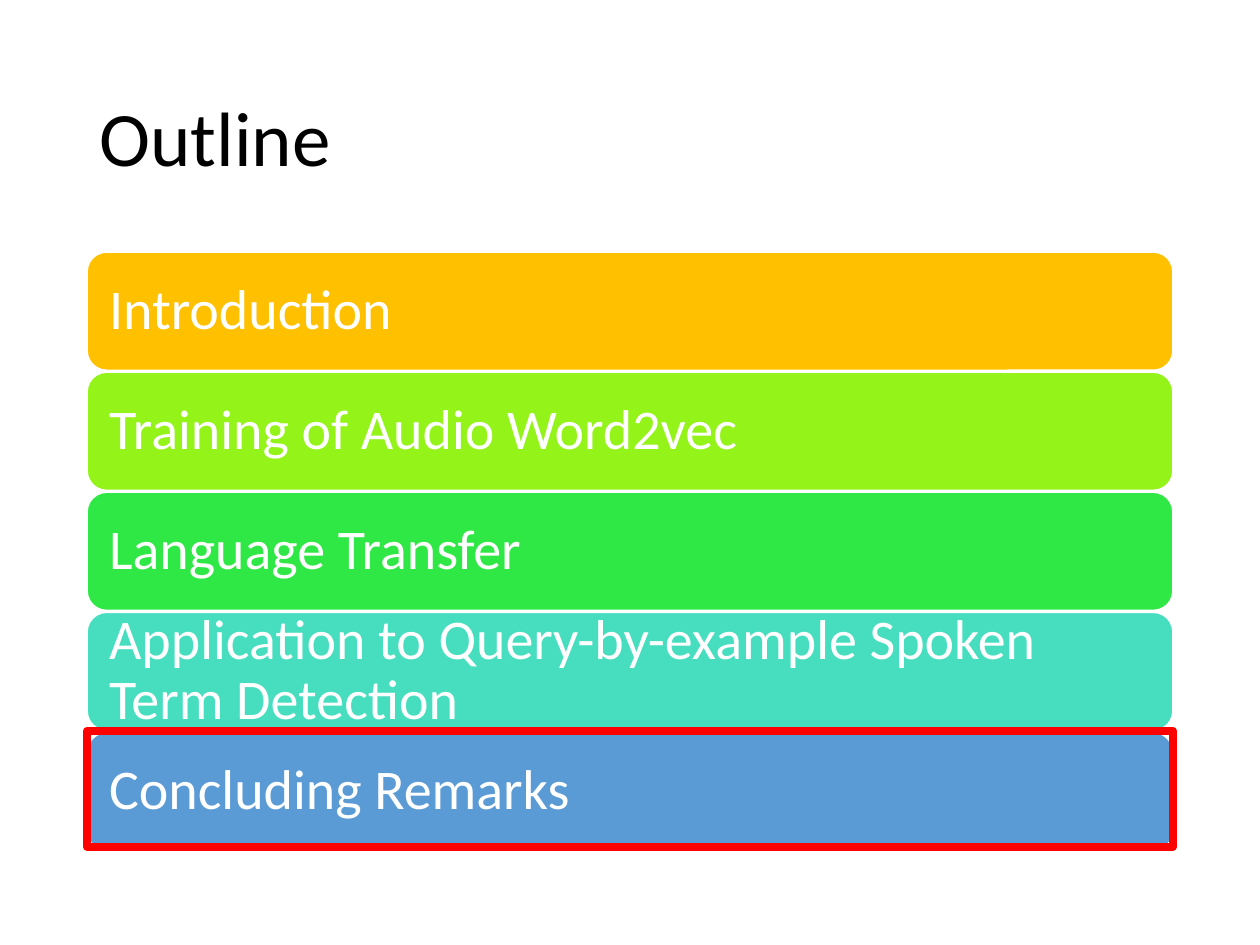
from pptx import Presentation
from pptx import util as u
from pptx.dml.color import RGBColor
from pptx.enum import shapes, text

COLORS = {
    "black": "000000", "white": "FFFFFF", "red": "FF0000",
    "amber": "FFC000", "lime": "94F319", "green": "30E845",
    "teal": "46DEBF", "blue": "5B9BD5",
}
SECTIONS = [
    ("Introduction", "amber"),
    ("Training of Audio Word2vec", "lime"),
    ("Language Transfer", "green"),
    ("Application to Query-by-example Spoken Term Detection", "teal"),
    ("Concluding Remarks", "blue"),
]
LEFT, WIDTH = u.Inches(0.69), u.Inches(8.62)
TOP, HEIGHT, STEP = 2, 0.94, 0.953


def rgb(name):
    return RGBColor.from_string(COLORS[name])


def write(tf, words, size, color):
    tf.word_wrap = True
    tf.auto_size = text.MSO_AUTO_SIZE.NONE
    tf.vertical_anchor = text.MSO_ANCHOR.MIDDLE
    p = tf.paragraphs[0]
    p.alignment = text.PP_ALIGN.LEFT
    p.line_spacing = 0.9
    r = p.add_run()
    r.text = words
    r.font.name = "Calibri"
    r.font.size = u.Pt(size)
    r.font.color.rgb = rgb(color)


prs = Presentation()
prs.slide_width, prs.slide_height = u.Inches(10), u.Inches(7.5)
s = prs.slides.add_slide(prs.slide_layouts[5])

title = s.shapes.title
title.left, title.top = LEFT, u.Inches(0.4)
title.width, title.height = WIDTH, u.Inches(1.45)
write(title.text_frame, "Outline", 44, "black")

for i, (words, color) in enumerate(SECTIONS):
    sp = s.shapes.add_shape(shapes.MSO_SHAPE.ROUNDED_RECTANGLE, LEFT,
                            u.Inches(TOP + i * STEP), WIDTH, u.Inches(HEIGHT))
    sp.shadow.inherit = False
    sp.fill.solid()
    sp.fill.fore_color.rgb = rgb(color)
    sp.line.color.rgb = rgb("white")
    sp.line.width = u.Pt(1)
    tf = sp.text_frame
    tf.margin_left = tf.margin_right = u.Inches(0.13)
    tf.margin_top = tf.margin_bottom = u.Inches(0.13)
    write(tf, words, 32, "white")

highlight = s.shapes.add_shape(shapes.MSO_SHAPE.RECTANGLE, LEFT, u.Inches(5.8),
                               WIDTH, u.Inches(0.92))
highlight.shadow.inherit = False
highlight.fill.background()
highlight.line.color.rgb = rgb("red")
highlight.line.width = u.Pt(4.5)

prs.save("out.pptx")
